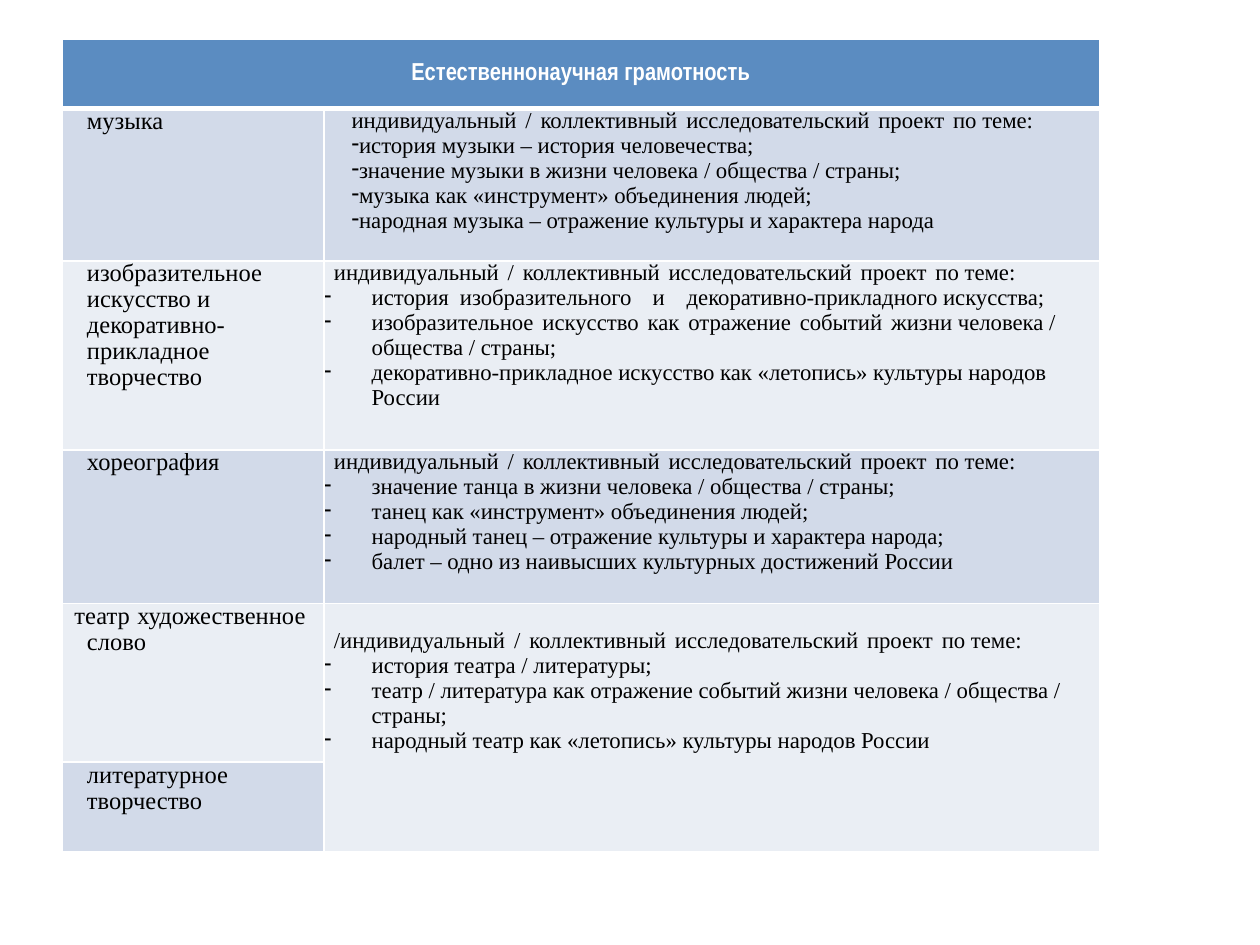
import pptx
import pptx.util
import pptx.dml.color
import pptx.enum.text
import pptx.oxml
import pptx.oxml.ns
from lxml import etree

Inches = pptx.util.Inches
Pt = pptx.util.Pt
RGBColor = pptx.dml.color.RGBColor

WHITE = RGBColor(0xFF, 0xFF, 0xFF)
BLACK = RGBColor(0, 0, 0)
HEADER_BLUE = RGBColor(0x5B, 0x8C, 0xC1)
BAND_DARK = RGBColor(0xD2, 0xDA, 0xE9)
BAND_LIGHT = RGBColor(0xEA, 0xEE, 0xF4)

HEADING = "Естественнонаучная грамотность"
LEAD = "индивидуальный / коллективный исследовательский проект по"
LEAD_END = " теме:"
COLUMN_WIDTHS = [2.08, 6.16]
ROW_HEIGHTS = [0.55, 1.21, 1.5, 1.22, 1.26, 0.71]

SUBJECTS = [
    ["музыка"],
    ["изобразительное искусство и", "декоративно-прикладное", "творчество"],
    ["хореография"],
    ["театр\tхудожественное", "слово"],
    ["литературное творчество"],
]
PROJECTS = [
    [
        "история музыки – история человечества;",
        "значение музыки в жизни человека / общества / страны;",
        "музыка как «инструмент» объединения людей;",
        "народная музыка – отражение культуры и характера народа",
    ],
    [
        "история\tизобразительного\tи\tдекоративно-прикладного искусства;",
        ("изобразительное искусство как отражение событий жизни",
         " человека / общества / страны;"),
        "декоративно-прикладное искусство как «летопись» культуры народов России",
    ],
    [
        "значение танца в жизни человека / общества / страны;",
        "танец как «инструмент» объединения людей;",
        "народный танец – отражение культуры и характера народа;",
        "балет – одно из наивысших культурных достижений России",
    ],
    [
        "история театра / литературы;",
        "театр / литература как отражение событий жизни человека / общества / страны;",
        "народный театр как «летопись» культуры народов России",
    ],
]


def add_element(parent, tag, **attributes):
    element = etree.SubElement(parent, pptx.oxml.ns.qn(tag))
    for name, value in attributes.items():
        element.set(name, str(value))
    return element


def style_cell(cell, fill, top=1, bottom=1):
    properties = cell._tc.get_or_add_tcPr()
    for side, width in (("L", 1), ("R", 1), ("T", top), ("B", bottom)):
        line = add_element(properties, f"a:ln{side}", w=Pt(width))
        add_element(add_element(line, "a:solidFill"), "a:srgbClr", val=WHITE)
    cell.fill.solid()
    cell.fill.fore_color.rgb = fill


def clear_margins(cell, top=0):
    cell.margin_left = cell.margin_right = cell.margin_bottom = 0
    cell.margin_top = Inches(top)


def format_para(para, size, left, first=0, bullet=False, tabs=()):
    properties = para._p.get_or_add_pPr()
    properties.set("marL", str(Inches(left)))
    properties.set("indent", str(Inches(first)))
    if bullet:
        add_element(add_element(properties, "a:buClr"), "a:srgbClr", val=BLACK)
        add_element(properties, "a:buChar", char="-")
    if tabs:
        stops = add_element(properties, "a:tabLst")
        for stop in tabs:
            add_element(stops, "a:tab", pos=Inches(stop), algn="l")
    set_font(para.font, "Times New Roman", size, BLACK, False)


def set_font(font, name, size, color, bold):
    font.name = name
    font.size = Pt(size)
    font.bold = bold
    font.color.rgb = color


def add_wide_text(para, wide, ending):
    for index, word in enumerate(wide.split(" ")):
        if index:
            gap = para.add_run()
            gap.text = " "
            gap._r.get_or_add_rPr().set("spc", "190")
        para.add_run().text = word
    para.add_run().text = ending


def next_para(frame, index):
    return frame.add_paragraph() if index else frame.paragraphs[0]


def fill_header(cell):
    style_cell(cell, HEADER_BLUE, bottom=3)
    cell.vertical_anchor = pptx.enum.text.MSO_ANCHOR.MIDDLE
    para = cell.text_frame.paragraphs[0]
    para.text = HEADING
    para.alignment = pptx.enum.text.PP_ALIGN.CENTER
    set_font(para.font, "Arial Narrow", 14, WHITE, True)


def fill_subject(cell, lines):
    clear_margins(cell)
    for index, line in enumerate(lines):
        para = next_para(cell.text_frame, index)
        para.text = line
        para.line_spacing = Pt(14.9)
        tabbed = "\t" in line
        format_para(para, 14, 0.1 if tabbed else 0.2, tabs=(0.72,) if tabbed else ())


def fill_projects(cell, items, lead_prefix="", lead_left=0.08, left=0.38, first=-0.38, top=0):
    clear_margins(cell, top)
    lead = cell.text_frame.paragraphs[0]
    format_para(lead, 13, lead_left)
    add_wide_text(lead, lead_prefix + LEAD, LEAD_END)
    for item in items:
        para = cell.text_frame.add_paragraph()
        tabs = (1.08, 2.61, 2.88) if "\t" in item else ()
        format_para(para, 13, left, first, bullet=True, tabs=tabs)
        if isinstance(item, tuple):
            add_wide_text(para, *item)
        else:
            para.add_run().text = item


def add_literacy_table(page, left, top, width, height):
    frame = page.shapes.add_table(len(ROW_HEIGHTS), len(COLUMN_WIDTHS), left, top, width, height)
    table = frame.table
    for column, size in zip(table.columns, COLUMN_WIDTHS):
        column.width = Inches(size)
    for row, size in zip(table.rows, ROW_HEIGHTS):
        row.height = Inches(size)

    table.cell(0, 0).merge(table.cell(0, 1))
    table.cell(4, 1).merge(table.cell(5, 1))
    fill_header(table.cell(0, 0))
    for number, lines in enumerate(SUBJECTS, start=1):
        band = BAND_DARK if number % 2 else BAND_LIGHT
        for column in range(len(COLUMN_WIDTHS)):
            cell = table.cell(number, column)
            fill = BAND_LIGHT if cell.is_spanned else band
            style_cell(cell, fill, top=3 if number == 1 else 1)
        fill_subject(table.cell(number, 0), lines)

    layouts = [
        {"lead_left": 0.22, "left": 0.2, "first": 0.02},
        {},
        {},
        {"lead_prefix": "/", "top": 0.2},
    ]
    for number, (items, layout) in enumerate(zip(PROJECTS, layouts), start=1):
        fill_projects(table.cell(number, 1), items, **layout)


def main():
    deck = pptx.Presentation()
    deck.slide_width = Inches(10)
    deck.slide_height = Inches(7.5)
    page = deck.slides.add_slide(deck.slide_layouts[6])
    add_literacy_table(page, Inches(0.49), Inches(0.31), Inches(8.24), Inches(6.45))
    deck.save("out.pptx")


if __name__ == "__main__":
    main()
